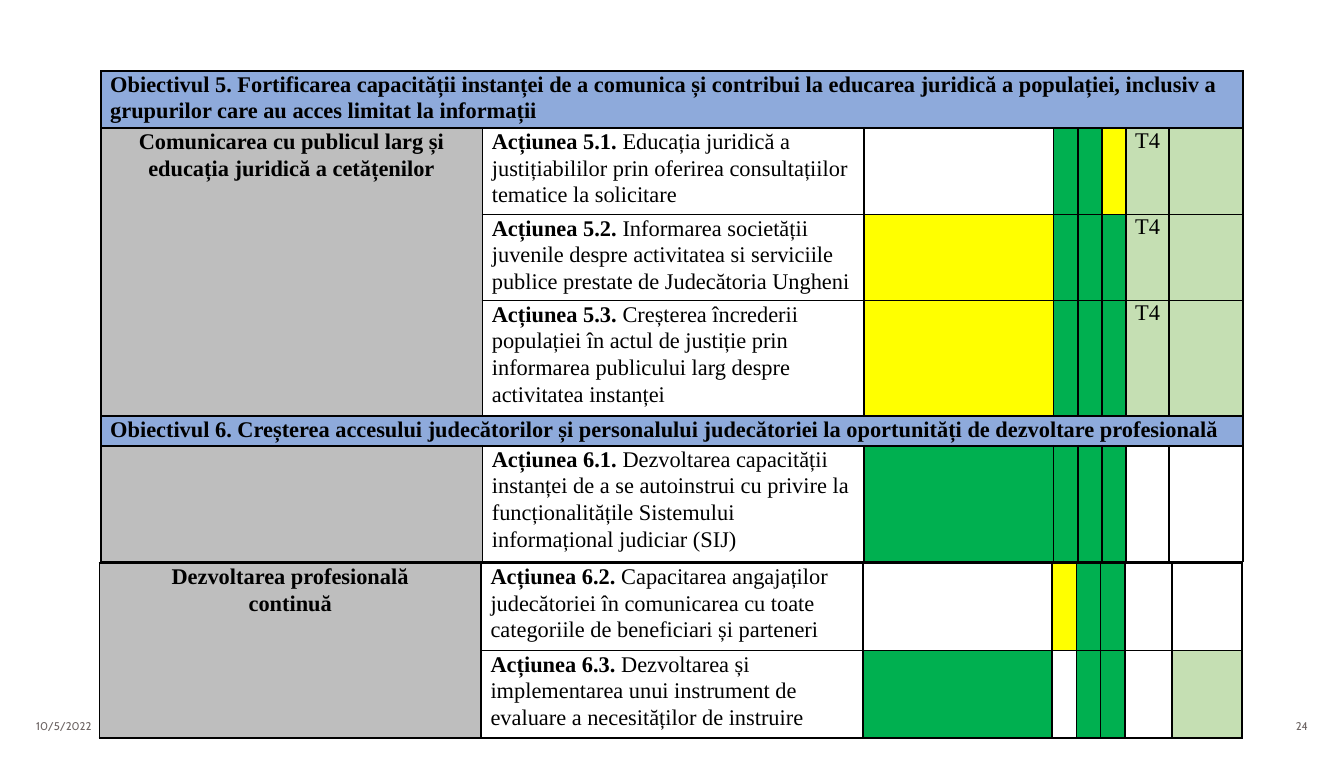
from lxml.etree import SubElement
from pptx import Presentation
from pptx.dml.color import RGBColor
from pptx.enum.text import MSO_ANCHOR, PP_ALIGN
from pptx.oxml.ns import qn
from pptx.util import Inches, Pt

W, H = 10, 5.67
COLORS = {"B": "8EAADB", "S": "BEBEBE", "G": "00B050", "Y": "FFFF00", "L": "C5DFB3", "W": "FFFFFF"}
STATUS_COL, QUARTER_COL = 2, 6

TABLES = [
    {
        "at": (0.75, 0.53),
        "cols": [2.84, 2.84, 1.41, 0.18, 0.18, 0.18, 0.32, 0.55],
        "topic": (1, 3, ["Comunicarea cu publicul larg și", "educația juridică a cetățenilor"], 0.11, 26),
        "rows": [
            (0.42, "Obiectivul 5. Fortificarea capacității instanței de a comunica și contribui la educarea juridică a populației, inclusiv a grupurilor care au acces limitat la informații"),
            (0.63, "Acțiunea 5.1. ", "Educația juridică a justițiabililor prin oferirea consultațiilor tematice la solicitare", "WGGYLL", "T4"),
            (0.64, "Acțiunea 5.2. ", "Informarea societății juvenile despre activitatea si serviciile publice prestate de Judecătoria Ungheni", "YGGGLL", "T4"),
            (0.86, "Acțiunea 5.3. ", "Creșterea încrederii populației în actul de justiție prin informarea publicului larg despre activitatea instanței", "YGGGLL", "T4"),
            (0.22, "Obiectivul 6. Creșterea accesului judecătorilor și personalului judecătoriei la oportunități de dezvoltare profesională"),
            (0.86, "Acțiunea 6.1. ", "Dezvoltarea capacității instanței de a se autoinstrui cu privire la funcționalitățile Sistemului informațional judiciar (SIJ)", "GGGGWW", ""),
        ],
    },
    {
        "at": (0.74, 4.19),
        "cols": [2.84, 2.84, 1.41, 0.18, 0.18, 0.18, 0.35, 0.52],
        "topic": (0, 1, ["Dezvoltarea profesională continuă"], 0.3, 0),
        "rows": [
            (0.65, "Acțiunea 6.2. ", "Capacitarea angajaților judecătoriei în comunicarea cu toate categoriile de beneficiari și parteneri", "WYGGWW", ""),
            (0.65, "Acțiunea 6.3. ", "Dezvoltarea și implementarea unui instrument de evaluare a necesităților de instruire", "GWGGWL", ""),
        ],
    },
]

FOOTER = [("10/5/2022", 0.17, PP_ALIGN.LEFT), ("24", 7.5, PP_ALIGN.RIGHT)]


def rgb(value):
    return RGBColor.from_string(value)


def add_run(p, text, bold=False, size=12, font="Times New Roman", color="000000"):
    r = p.add_run()
    r.text = text
    r.font.size, r.font.name, r.font.bold = Pt(size), font, bold
    r.font.color.rgb = rgb(color)


def write(p, runs, align=PP_ALIGN.LEFT, left=0.07, right=0, spacing=1.07):
    p.alignment, p.line_spacing = align, spacing
    pPr = p._p.get_or_add_pPr()
    pPr.set("marL", str(Inches(left)))
    pPr.set("marR", str(Inches(right)))
    for text, bold in runs:
        add_run(p, text, bold)


def style_cell(cell, fill):
    cell.margin_left = cell.margin_right = cell.margin_top = cell.margin_bottom = 0
    tcPr = cell._tc.get_or_add_tcPr()
    for side in ("lnL", "lnR", "lnT", "lnB"):
        ln = SubElement(tcPr, qn(f"a:{side}"), w=str(Pt(1)))
        SubElement(SubElement(ln, qn("a:solidFill")), qn("a:srgbClr"), val="000000")
    cell.fill.solid()
    cell.fill.fore_color.rgb = rgb(COLORS[fill])


def add_plan(s, plan):
    rows, cols = plan["rows"], plan["cols"]
    left, top = plan["at"]
    size = sum(cols), sum(row[0] for row in rows)
    table = s.shapes.add_table(len(rows), len(cols), *map(Inches, (left, top, *size))).table
    table.first_row = table.horz_banding = False
    for col, width in zip(table.columns, cols):
        col.width = Inches(width)

    for i, (height, title, *action) in enumerate(rows):
        table.rows[i].height = Inches(height)
        fills = "SW" + action[1] if action else "B" * len(cols)
        for j, fill in enumerate(fills):
            style_cell(table.cell(i, j), fill)
        if action:
            body, _, quarter = action
            write(table.cell(i, 1).text_frame.paragraphs[0], [(title, True), (body, False)], right=0.03)
            if quarter:
                p = table.cell(i, QUARTER_COL).text_frame.paragraphs[0]
                write(p, [(quarter, False)], PP_ALIGN.CENTER, 0, spacing=1.0)
        else:
            table.cell(i, 0).merge(table.cell(i, len(cols) - 1))
            write(table.cell(i, 0).text_frame.paragraphs[0], [(title, True)], spacing=1.06)

    first, last, lines, indent, before = plan["topic"]
    table.cell(first, 0).merge(table.cell(last, 0))
    tf = table.cell(first, 0).text_frame
    for n, line in enumerate(lines):
        p = tf.add_paragraph() if n else tf.paragraphs[0]
        write(p, [(line, True)], PP_ALIGN.CENTER, indent, indent)
        p.space_before = Pt(0 if n else before)


def add_footer(s, text, left, align):
    tf = s.shapes.add_textbox(Inches(left), Inches(5.3), Inches(2.33), Inches(0.2)).text_frame
    tf.word_wrap, tf.vertical_anchor = True, MSO_ANCHOR.MIDDLE
    p = tf.paragraphs[0]
    p.alignment = align
    add_run(p, text, size=6, font="Cabin", color="6C6463")


def main():
    prs = Presentation()
    prs.slide_width, prs.slide_height = Inches(W), Inches(H)
    s = prs.slides.add_slide(prs.slide_layouts[6])
    for item in FOOTER:
        add_footer(s, *item)
    for plan in TABLES:
        add_plan(s, plan)
    prs.save("out.pptx")


if __name__ == "__main__":
    main()
